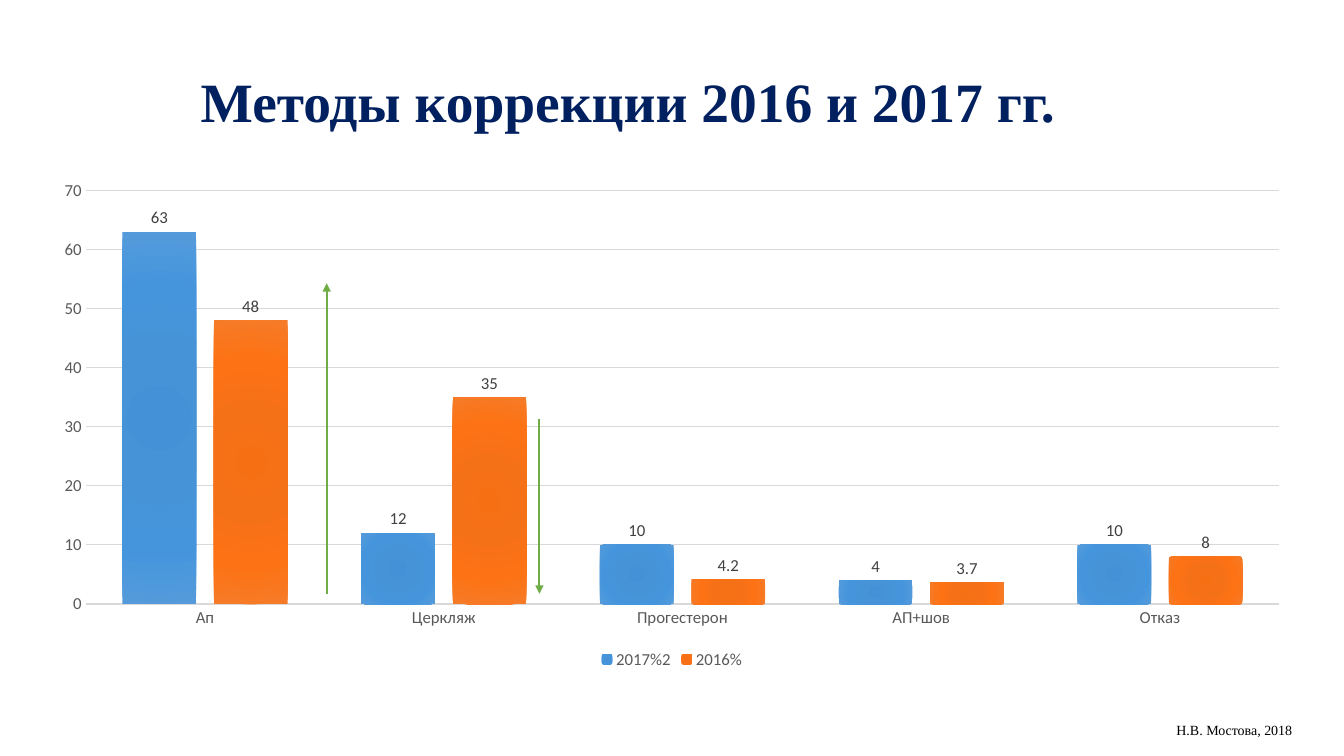
from lxml import etree
from pptx import Presentation
from pptx.chart.data import CategoryChartData
from pptx.dml.color import RGBColor
from pptx.enum.chart import XL_CHART_TYPE, XL_LABEL_POSITION, XL_LEGEND_POSITION, XL_TICK_MARK
from pptx.enum.shapes import MSO_CONNECTOR
from pptx.enum.text import MSO_ANCHOR, MSO_AUTO_SIZE, PP_ALIGN
from pptx.oxml import parse_xml
from pptx.oxml.ns import nsdecls, qn
from pptx.util import Inches, Pt

COLUMNS = XL_CHART_TYPE.COLUMN_CLUSTERED
OUTSIDE_END = XL_LABEL_POSITION.OUTSIDE_END
BOTTOM = XL_LEGEND_POSITION.BOTTOM
NO_TICK = XL_TICK_MARK.NONE
STRAIGHT = MSO_CONNECTOR.STRAIGHT
MIDDLE = MSO_ANCHOR.MIDDLE
LEFT = PP_ALIGN.LEFT

NAVY = RGBColor(0x00, 0x20, 0x60)
BLACK = RGBColor(0x00, 0x00, 0x00)
GREEN = RGBColor(0x70, 0xAD, 0x47)
GRID = RGBColor(0xD9, 0xD9, 0xD9)
AXIS_TEXT = RGBColor(0x59, 0x59, 0x59)
LABEL_TEXT = RGBColor(0x40, 0x40, 0x40)
BLUES = [RGBColor(0x44, 0x91, 0xD8), RGBColor(0x47, 0x93, 0xD7),
         RGBColor(0x45, 0x95, 0xDD), RGBColor(0x55, 0x9B, 0xDB)]
ORANGES = [RGBColor(0xF7, 0x6F, 0x13), RGBColor(0xF5, 0x71, 0x18),
           RGBColor(0xFD, 0x72, 0x14), RGBColor(0xF6, 0x7B, 0x28)]
STOPS = [0, 34, 70, 100]

TITLE = "Методы коррекции 2016 и 2017 гг."
AUTHOR = "Н.В. Мостова, 2018"
METHODS = ["Ап", "Церкляж", "Прогестерон", "АП+шов", "Отказ"]
SERIES = [
    ("2017%2", [63, 12, 10, 4, 10], BLUES),
    ("2016%", [48, 35, 4.2, 3.7, 8], ORANGES),
]
ARROWS = [(3.24, 5.89, 2.81), (5.35, 4.16, 5.89)]

TITLE_FONT = {"name": "Times New Roman", "size": Pt(39.6), "bold": True}
AUTHOR_FONT = {"name": "Times New Roman", "size": Pt(10)}
CHART_FONT = {"name": "Calibri", "size": Pt(12), "bold": False}


def set_font(font, values, color):
    for name, value in values.items():
        setattr(font, name, value)
    font.color.rgb = color


def set_box(sp, left, top, width, height):
    box = {"left": left, "top": top, "width": width, "height": height}
    for name, value in box.items():
        setattr(sp, name, Inches(value))


def radial_fill(fmt, colors):
    stops = "".join(
        f'<a:gs pos="{pos * 1000}"><a:srgbClr val="{color}"/></a:gs>'
        for pos, color in zip(STOPS, colors))
    fmt.fill.background()
    fill = fmt.fill._xPr.find(qn("a:noFill"))
    fill.getparent().replace(fill, parse_xml(
        f'<a:gradFill {nsdecls("a")} rotWithShape="1"><a:gsLst>{stops}</a:gsLst>'
        '<a:path path="circle"><a:fillToRect l="100000" t="100000" '
        'r="100000" b="100000"/></a:path></a:gradFill>'))
    fmt.line.fill.background()


def add_methods_chart(slide):
    data = CategoryChartData()
    data.categories = METHODS
    for name, values, _ in SERIES:
        data.add_series(name, values)
    chart = slide.shapes.add_chart(
        COLUMNS, Inches(0.39), Inches(1.69), Inches(12.55), Inches(4.99), data).chart
    set_font(chart.font, CHART_FONT, AXIS_TEXT)
    chart.has_title = False
    chart.has_legend = True
    chart.legend.position = BOTTOM
    chart.legend.include_in_layout = False
    set_font(chart.legend.font, CHART_FONT, AXIS_TEXT)

    for axis in (chart.category_axis, chart.value_axis):
        axis.major_tick_mark = axis.minor_tick_mark = NO_TICK
        set_font(axis.tick_labels.font, CHART_FONT, AXIS_TEXT)
    base = chart.category_axis.format.line
    base.color.rgb, base.width = GRID, Pt(1)
    value_axis = chart.value_axis
    value_axis.minimum_scale, value_axis.maximum_scale = 0, 70
    value_axis.major_unit = 10
    value_axis.format.line.fill.background()
    grid = value_axis.major_gridlines.format.line
    grid.color.rgb, grid.width = GRID, Pt(0.75)

    plot = chart.plots[0]
    plot.gap_width, plot.overlap = 100, -24
    plot.vary_by_categories = False
    for series, (_, _, colors) in zip(plot.series, SERIES):
        radial_fill(series.format, colors)
        labels = series.data_labels
        labels.show_value = True
        labels.position = OUTSIDE_END
        set_font(labels.font, CHART_FONT, LABEL_TEXT)


def add_arrow(slide, x, start, end):
    arrow = slide.shapes.add_connector(
        STRAIGHT, Inches(x), Inches(start), Inches(x), Inches(end))
    arrow.line.color.rgb, arrow.line.width = GREEN, Pt(1.5)
    etree.SubElement(arrow.line._get_or_add_ln(), qn("a:tailEnd"), type="triangle")
    etree.SubElement(arrow._element.spPr, qn("a:effectLst"))


def main():
    prs = Presentation()
    prs.slide_width, prs.slide_height = Inches(13.33), Inches(7.5)
    slide = prs.slides.add_slide(prs.slide_layouts[5])

    title = slide.shapes.title
    set_box(title, 1.89, 0.39, 9.19, 1.3)
    tf = title.text_frame
    tf.text = TITLE
    tf.vertical_anchor = MIDDLE
    tf.auto_size = MSO_AUTO_SIZE.NONE
    p = tf.paragraphs[0]
    p.alignment, p.line_spacing = LEFT, 0.9
    set_font(p.runs[0].font, TITLE_FONT, NAVY)

    add_methods_chart(slide)
    for x, start, end in ARROWS:
        add_arrow(slide, x, start, end)

    author = slide.shapes.add_textbox(
        Inches(11.57), Inches(7.11), Inches(1.37), Inches(0.27))
    tf = author.text_frame
    tf.text = AUTHOR
    tf.word_wrap = False
    tf.auto_size = MSO_AUTO_SIZE.SHAPE_TO_FIT_TEXT
    set_font(tf.paragraphs[0].runs[0].font, AUTHOR_FONT, BLACK)

    prs.save("out.pptx")


if __name__ == "__main__":
    main()
